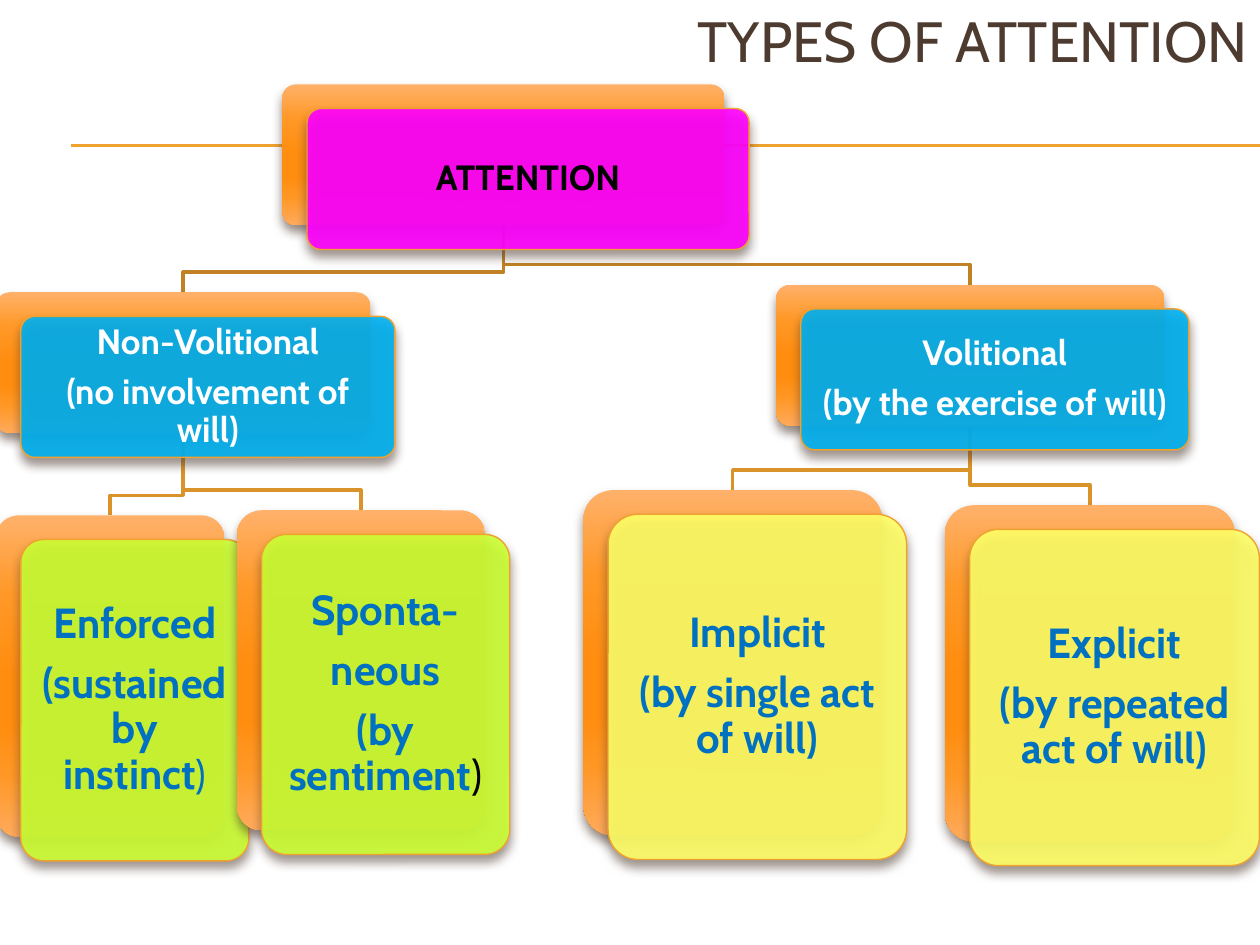
from dataclasses import dataclass
from typing import Optional

from lxml.etree import SubElement
from pptx import Presentation
from pptx.dml.color import RGBColor
from pptx.enum.shapes import MSO_CONNECTOR, MSO_SHAPE
from pptx.enum.text import MSO_ANCHOR, PP_ALIGN
from pptx.oxml.ns import qn
from pptx.util import Pt

FONT = "Cabin"
COLORS = {
    "title": "4E3B30",
    "rule": "F0A22E",
    "upper_link": "C08225",
    "lower_link": "DA932A",
    "root": "FF00FF",
    "branch": "00B0F0",
    "non_volitional_leaf": "CCFF33",
    "volitional_leaf": "FFFF66",
    "black": "000000",
    "white": "FFFFFF",
    "leaf_text": "0070C0",
}
BACK_GRADIENT = [(0, "FFB16A"), (25, "FF9826"), (50, "FF8D0F"),
                 (65, "FF8D0F"), (80, "FF9724"), (100, "FFAA5C")]
FRONT_OFFSET = (14.1, 13.8)
ELBOW_RISE = 11.5


@dataclass
class Level:
    size: float
    inset: float
    text_color: str
    link_color: str


@dataclass
class Closing:
    """Closing bracket in regular weight."""
    size: float
    color: str


@dataclass
class Card:
    lines: list[str]
    left: float
    top: float
    width: float
    height: float
    fill: str
    level: Level
    parent: Optional["Card"] = None
    closing: Optional[Closing] = None

    @property
    def center(self) -> float:
        return self.left + self.width / 2


ROOT = Level(20, 6, "black", "")
BRANCH = Level(20, 6, "white", "upper_link")
LEAF = Level(24, 7.2, "leaf_text", "lower_link")

attention = Card(["ATTENTION"], 161.3, 48.2, 252.7, 80.6, "root", ROOT)
non_volitional = Card(["Non-Volitional", "(no involvement of will)"],
                      -2.2, 167, 213.8, 80.6, "branch", BRANCH, attention)
enforced = Card(["Enforced", "(sustained by instinct"],
                -2.2, 294.5, 130.3, 183.6, "non_volitional_leaf", LEAF,
                non_volitional, Closing(23, "leaf_text"))
spontaneous = Card(["Sponta-", "neous", "(by sentiment"],
                   135.4, 291.6, 141.8, 182.9, "non_volitional_leaf", LEAF,
                   non_volitional, Closing(24, "black"))
volitional = Card(["Volitional", "(by the exercise of will)"],
                  443.5, 162.7, 221.8, 80.6, "branch", BRANCH, attention)
implicit = Card(["Implicit", "(by single act of will)"],
                333.4, 280.1, 170.6, 197.3, "volitional_leaf", LEAF, volitional)
explicit = Card(["Explicit", "(by repeated act of will)"],
                540, 288.7, 165.6, 192.2, "volitional_leaf", LEAF, volitional)
CARDS = [attention, non_volitional, enforced, spontaneous,
         volitional, implicit, explicit]


def rgb(name: str) -> RGBColor:
    return RGBColor.from_string(COLORS[name])


def add_color(parent, value: str, alpha: Optional[int] = None) -> None:
    color = SubElement(parent, qn("a:srgbClr"), val=value)
    if alpha is not None:
        SubElement(color, qn("a:alpha"), val=str(alpha * 1000))


def add_shadow(shape) -> None:
    effects = SubElement(shape._element.spPr, qn("a:effectLst"))
    shadow = SubElement(effects, qn("a:outerShdw"), blurRad=str(Pt(6)),
                        dist=str(Pt(4)), dir="5400000", rotWithShape="0")
    add_color(shadow, COLORS["title"], 60)


def format_run(run, size: float, color: str, bold: bool) -> None:
    run.font.name = FONT
    run.font.size = Pt(size)
    run.font.color.rgb = rgb(color)
    run.font.bold = bold


def add_rule(slide, y: float) -> None:
    line = slide.shapes.add_connector(MSO_CONNECTOR.STRAIGHT,
                                      Pt(40.5), Pt(y), Pt(720), Pt(y))
    line.line.color.rgb = rgb("rule")
    line.line.width = Pt(0.75)
    SubElement(line._element.spPr, qn("a:effectLst"))


def add_title(slide, text: str) -> None:
    box = slide.shapes.add_textbox(Pt(36), Pt(2.9), Pt(684), Pt(39.6))
    frame = box.text_frame
    frame.word_wrap = True
    frame.vertical_anchor = MSO_ANCHOR.MIDDLE
    frame.text = text
    frame.paragraphs[0].alignment = PP_ALIGN.RIGHT
    format_run(frame.paragraphs[0].runs[0], 32.4, "title", False)


def add_link(slide, parent: Card, child: Card) -> None:
    bottom = parent.top + parent.height
    elbow = child.top - ELBOW_RISE
    builder = slide.shapes.build_freeform(Pt(parent.center), Pt(bottom))
    builder.add_line_segments([(Pt(parent.center), Pt(elbow)),
                               (Pt(child.center), Pt(elbow)),
                               (Pt(child.center), Pt(child.top))], close=False)
    link = builder.convert_to_shape()
    link.shadow.inherit = False
    link.fill.background()
    link.line.color.rgb = rgb(child.level.link_color)
    link.line.width = Pt(2)


def add_panel(slide, card: Card, dx: float = 0, dy: float = 0):
    panel = slide.shapes.add_shape(
        MSO_SHAPE.ROUNDED_RECTANGLE, Pt(card.left + dx), Pt(card.top + dy),
        Pt(card.width), Pt(card.height))
    panel.adjustments[0] = 0.1
    return panel


def write_lines(frame, card: Card) -> None:
    level = card.level
    frame.word_wrap = True
    frame.vertical_anchor = MSO_ANCHOR.MIDDLE
    frame.margin_left = frame.margin_right = Pt(level.inset)
    frame.margin_top = frame.margin_bottom = Pt(level.inset)
    frame.text = "\n".join(card.lines)
    for paragraph in frame.paragraphs:
        paragraph.alignment = PP_ALIGN.CENTER
        paragraph.line_spacing = 0.9
        paragraph.space_after = Pt(level.size * 0.35)
        format_run(paragraph.runs[0], level.size, level.text_color, True)
    if card.closing:
        run = frame.paragraphs[-1].add_run()
        run.text = ")"
        format_run(run, card.closing.size, card.closing.color, False)


def add_card(slide, card: Card) -> None:
    # Orange panel behind
    back = add_panel(slide, card)
    back.fill.gradient()
    back.fill.gradient_angle = 270
    stops = back._element.spPr.find(".//" + qn("a:gsLst"))
    stops.clear()
    for position, value in BACK_GRADIENT:
        add_color(SubElement(stops, qn("a:gs"), pos=str(position * 1000)), value)
    back.line.fill.background()
    add_shadow(back)

    # Translucent panel in front, with the text
    front = add_panel(slide, card, *FRONT_OFFSET)
    front.fill.solid()
    front.fill.fore_color.rgb = rgb(card.fill)
    fill_color = front._element.spPr.find(qn("a:solidFill"))[0]
    SubElement(fill_color, qn("a:alpha"), val="90000")
    front.line.color.rgb = rgb("rule")
    front.line.width = Pt(0.79)
    add_shadow(front)
    write_lines(front.text_frame, card)


def main() -> None:
    presentation = Presentation()
    presentation.slide_width, presentation.slide_height = Pt(720), Pt(540)
    slide = presentation.slides.add_slide(presentation.slide_layouts[6])

    # Header
    for y in (82.8, 83.4):
        add_rule(slide, y)
    add_title(slide, "TYPES OF ATTENTION")

    # Tree: links first, cards on top
    for card in reversed(CARDS):
        if card.parent:
            add_link(slide, card.parent, card)
    for card in CARDS:
        add_card(slide, card)

    presentation.save("out.pptx")


if __name__ == "__main__":
    main()
